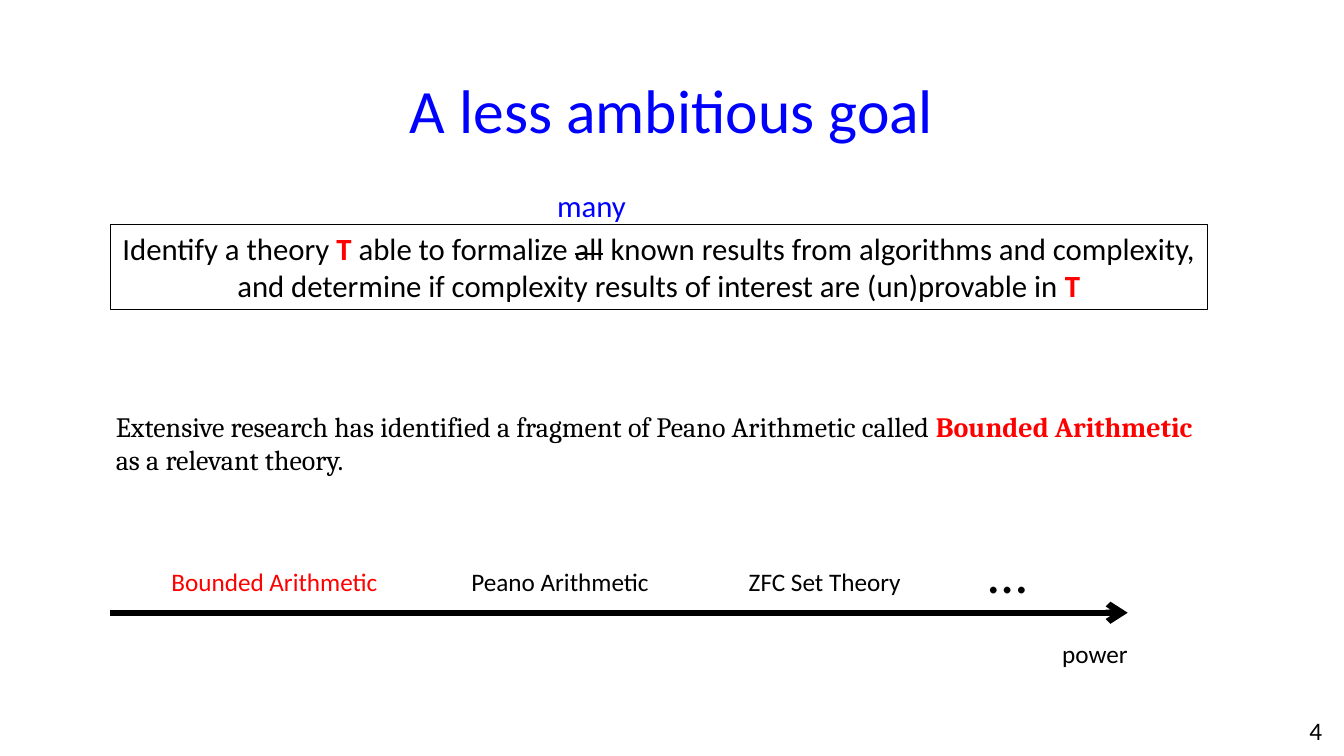
from lxml import etree
from pptx import Presentation
from pptx.dml.color import RGBColor
from pptx.enum.shapes import MSO_CONNECTOR, MSO_SHAPE
from pptx.enum.text import MSO_ANCHOR, MSO_AUTO_SIZE, PP_ALIGN
from pptx.oxml.ns import qn
from pptx.util import Cm, Pt

BLACK = RGBColor(0x00, 0x00, 0x00)
BLUE = RGBColor(0x00, 0x00, 0xFF)
RED = RGBColor(0xFF, 0x00, 0x00)
LEFT, CENTER = PP_ALIGN.LEFT, PP_ALIGN.CENTER
TOP, MIDDLE = MSO_ANCHOR.TOP, MSO_ANCHOR.MIDDLE
GROW = MSO_AUTO_SIZE.SHAPE_TO_FIT_TEXT
NO_FIT = MSO_AUTO_SIZE.NONE
RECTANGLE = MSO_SHAPE.RECTANGLE
STRAIGHT = MSO_CONNECTOR.STRAIGHT
TITLE_ONLY = 5

RED_BOLD = {"color": RED, "bold": True}
STRUCK = {"strike": True}


def write(box, *spans, size=18, font="Calibri", color=BLACK, align=LEFT,
          anchor=TOP, fit=GROW, spacing=None):
    """Fill box with one paragraph; a span is a string or (string, format)."""
    frame = box.text_frame
    frame.word_wrap = True
    frame.auto_size = fit
    frame.vertical_anchor = anchor
    para = frame.paragraphs[0]
    para.alignment = align
    para.line_spacing = spacing
    for span in spans:
        text, style = (span, {}) if isinstance(span, str) else span
        run = para.add_run()
        run.text = text
        run.font.name = font
        run.font.size = Pt(size)
        run.font.bold = style.get("bold", False)
        run.font.color.rgb = style.get("color", color)
        if style.get("strike"):
            run.font._element.set("strike", "sngStrike")


class PageBuilder:
    def __init__(self, deck):
        self.page = deck.slides.add_slide(deck.slide_layouts[TITLE_ONLY])
        self.shapes = self.page.shapes

    def title(self, text, left, top, width, height):
        box = self.page.shapes.title
        box.left, box.top = Cm(left), Cm(top)
        box.width, box.height = Cm(width), Cm(height)
        write(box, text, size=44, color=BLUE, align=CENTER, anchor=MIDDLE,
              fit=NO_FIT, spacing=0.9)

    def text(self, left, top, width, height, *spans, **style):
        box = self.shapes.add_textbox(Cm(left), Cm(top), Cm(width), Cm(height))
        write(box, *spans, **style)

    def framed_text(self, left, top, width, height, *spans, **style):
        box = self.shapes.add_shape(RECTANGLE, Cm(left), Cm(top), Cm(width), Cm(height))
        box.shadow.inherit = False
        box.fill.background()
        box.line.color.rgb = BLACK
        box.line.width = Pt(0.75)
        write(box, *spans, **style)

    def arrow(self, left, right, y, weight):
        arrow = self.shapes.add_connector(STRAIGHT, Cm(left), Cm(y), Cm(right), Cm(y))
        arrow.line.color.rgb = BLACK
        arrow.line.width = Pt(weight)
        etree.SubElement(arrow.line._get_or_add_ln(), qn("a:tailEnd"), type="arrow")
        etree.SubElement(arrow._element.spPr, qn("a:effectLst"))

    def start_group(self):
        self.shapes = self.page.shapes.add_group_shape().shapes

    def end_group(self):
        self.shapes = self.page.shapes


def main():
    deck = Presentation()
    deck.slide_width, deck.slide_height = Cm(33.87), Cm(19.05)
    page = PageBuilder(deck)

    page.title("A less ambitious goal", 2.33, 1.02, 29.21, 3.68)
    page.text(13.79, 4.57, 2.39, 1.19, "many", size=22, color=BLUE)
    page.text(2.67, 10.19, 27.74, 1.96,
              "Extensive research has identified a fragment of Peano Arithmetic called ",
              ("Bounded Arithmetic ", RED_BOLD),
              "as a relevant theory.", size=20, font="Cambria")
    page.framed_text(2.78, 5.67, 27.64, 2.13,
                     "Identify a theory ", ("T", RED_BOLD), " able to formalize ",
                     ("all", STRUCK),
                     " known results from algorithms and complexity, and determine "
                     "if complexity results of interest are (un)provable in ",
                     ("T", RED_BOLD), size=22, align=CENTER)

    page.start_group()
    page.arrow(2.78, 28.42, 15.44, 4.5)
    page.text(26.52, 15.95, 3.1, 1.02, "power")
    for theory, left, width, color in (
        ("Bounded Arithmetic", 4.07, 6.1, RED),
        ("Peano Arithmetic", 11.63, 5.51, BLACK),
        ("ZFC Set Theory", 18.62, 4.62, BLACK),
    ):
        page.text(left, 14.15, width, 1.02, theory, color=color)
    page.text(23.09, 13.41, 4.62, 1.96, "…", size=40, align=CENTER)
    page.end_group()

    page.text(32.54, 17.91, 1.24, 1.02, "4", align=CENTER)
    deck.save("out.pptx")


if __name__ == "__main__":
    main()
